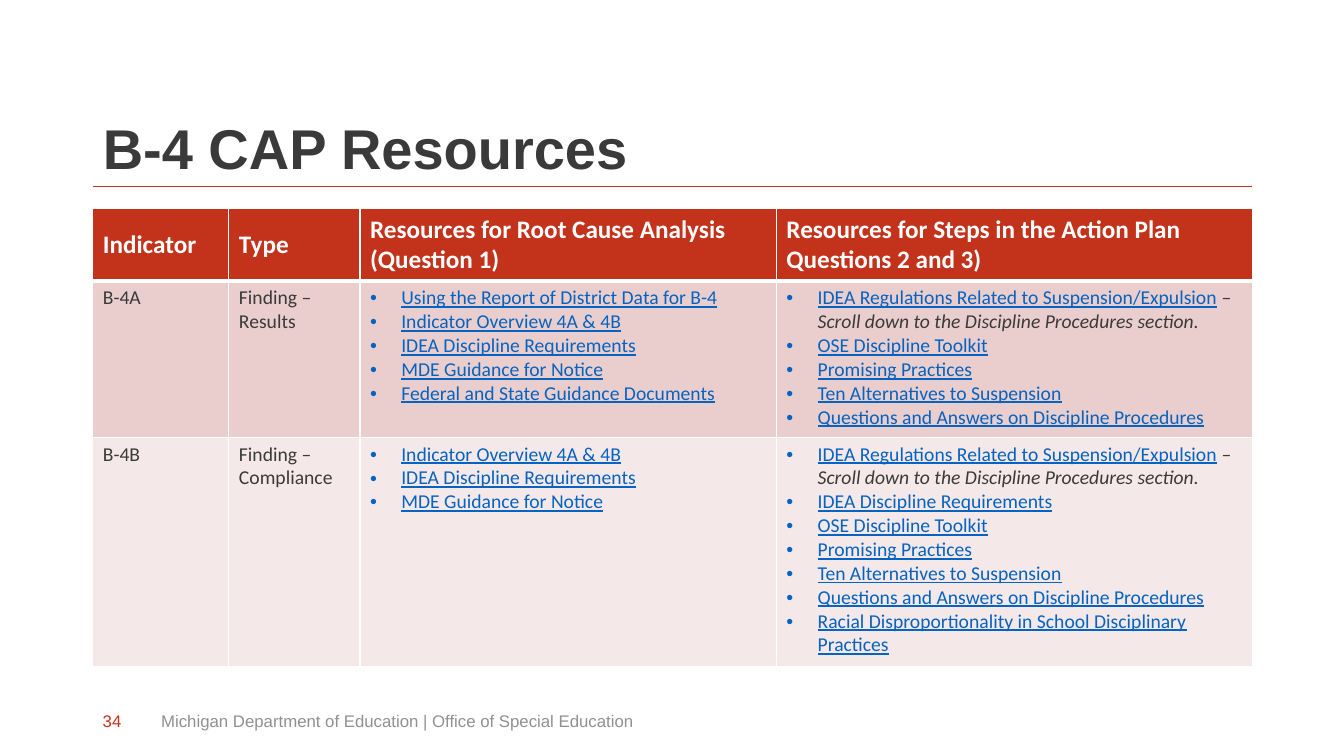
from dataclasses import dataclass

from lxml.etree import SubElement
from pptx import Presentation
from pptx.dml.color import RGBColor
from pptx.enum.text import MSO_ANCHOR, PP_ALIGN
from pptx.oxml.ns import qn
from pptx.util import Inches, Pt


@dataclass(frozen=True)
class Theme:
    red: str = "C3321B"
    ink: str = "3A3A3A"
    link: str = "0563C1"
    grey: str = "919191"
    white: str = "FFFFFF"
    heading_font: str = "Arial"
    table_font: str = "Calibri"
    title_size: int = 40
    header_size: int = 18
    body_size: int = 14
    footer_size: int = 12


@dataclass(frozen=True)
class Resource:
    title: str
    note: str = ""


@dataclass(frozen=True)
class Indicator:
    name: str
    finding: str
    root_cause: list[Resource]
    action_plan: list[Resource]
    fill: str


@dataclass(frozen=True)
class FooterText:
    text: str
    left: float
    width: float
    color: str


THEME = Theme()
LEFT = 0.92
COLUMN_WIDTHS = [1.35, 1.3, 4.13, 4.72]
ROW_HEIGHTS = [0.72, 1.55, 2.27]
HEADERS = ["Indicator", "Type", "Resources for Root Cause Analysis (Question 1)",
           "Resources for Steps in the Action Plan Questions 2 and 3)"]

REGULATIONS = Resource("IDEA Regulations Related to Suspension/Expulsion",
                       "Scroll down to the Discipline Procedures section.")
REQUIREMENTS = Resource("IDEA Discipline Requirements")
OVERVIEW = [Resource("Indicator Overview 4A & 4B"), REQUIREMENTS,
            Resource("MDE Guidance for Notice")]
DISCIPLINE = [Resource("OSE Discipline Toolkit"), Resource("Promising Practices"),
              Resource("Ten Alternatives to Suspension"),
              Resource("Questions and Answers on Discipline Procedures")]
INDICATORS = [
    Indicator("B-4A", "Finding – Results",
              [Resource("Using the Report of District Data for B-4"), *OVERVIEW,
               Resource("Federal and State Guidance Documents")],
              [REGULATIONS, *DISCIPLINE], "E9CECD"),
    Indicator("B-4B", "Finding – Compliance", OVERVIEW,
              [REGULATIONS, REQUIREMENTS, *DISCIPLINE,
               Resource("Racial Disproportionality in School Disciplinary Practices")],
              "F5E8E8"),
]
FOOTERS = [
    FooterText("Michigan Department of Education | Office of Special Education",
               1.5, 8.39, THEME.grey),
    FooterText("34", LEFT, 0.45, THEME.red),
]


def style(font, name: str, size: int, color: str, bold: bool = False,
          italic: bool = False, underline: bool = False) -> None:
    font.name, font.size = name, Pt(size)
    font.color.rgb = RGBColor.from_string(color)
    font.bold, font.italic, font.underline = bold, italic, underline


def format_cell(cell, fill: str, top: float = 1, bottom: float = 1) -> None:
    """Set white borders of the given widths, then the fill."""
    tcPr = cell._tc.get_or_add_tcPr()
    for side, width in (("L", 1), ("R", 1), ("T", top), ("B", bottom)):
        ln = SubElement(tcPr, qn(f"a:ln{side}"), w=str(Pt(width)))
        SubElement(SubElement(ln, qn("a:solidFill")), qn("a:srgbClr"), val=THEME.white)
    cell.fill.solid()
    cell.fill.fore_color.rgb = RGBColor.from_string(fill)


def write_cell(cell, text: str, size: int, color: str, bold: bool = False) -> None:
    cell.text_frame.text = text
    style(cell.text_frame.paragraphs[0].runs[0].font, THEME.table_font, size, color, bold)


def add_bullet(p) -> None:
    pPr = p._p.get_or_add_pPr()
    pPr.set("marL", str(Inches(0.31)))
    pPr.set("indent", str(-Inches(0.31)))
    SubElement(pPr, qn("a:buFont"), typeface="Arial")
    SubElement(pPr, qn("a:buChar"), char="•")


def write_resources(cell, resources: list[Resource]) -> None:
    tf = cell.text_frame
    tf.text = "\n".join(resource.title for resource in resources)
    for p, resource in zip(tf.paragraphs, resources):
        add_bullet(p)
        style(p.runs[0].font, THEME.table_font, THEME.body_size, THEME.link, underline=True)
        if resource.note:
            for text, italic in ((" – ", False), (resource.note, True)):
                r = p.add_run()
                r.text = text
                style(r.font, THEME.table_font, THEME.body_size, THEME.ink, italic=italic)


def add_title(s) -> None:
    title = s.shapes.title
    title.left, title.top = Inches(LEFT), Inches(0.4)
    title.width, title.height = Inches(11.5), Inches(1.45)
    tf = title.text_frame
    tf.text = "B-4 CAP Resources"
    tf.vertical_anchor = MSO_ANCHOR.BOTTOM
    p = tf.paragraphs[0]
    p.alignment, p.line_spacing = PP_ALIGN.LEFT, 0.9
    style(p.runs[0].font, THEME.heading_font, THEME.title_size, THEME.ink, bold=True)

    rule = s.shapes.add_connector(1, Inches(LEFT), Inches(1.85), Inches(12.42), Inches(1.85))
    rule.line.color.rgb = RGBColor.from_string(THEME.red)
    rule.line.width = Pt(0.5)
    SubElement(rule._element.spPr, qn("a:effectLst"))


def add_resource_table(s) -> None:
    table = s.shapes.add_table(len(ROW_HEIGHTS), len(COLUMN_WIDTHS), Inches(LEFT), Inches(2.07),
                               Inches(sum(COLUMN_WIDTHS)), Inches(sum(ROW_HEIGHTS))).table
    for column, width in zip(table.columns, COLUMN_WIDTHS):
        column.width = Inches(width)
    for row, height in zip(table.rows, ROW_HEIGHTS):
        row.height = Inches(height)

    for cell, header in zip(table.rows[0].cells, HEADERS):
        format_cell(cell, THEME.red, bottom=3)
        cell.vertical_anchor = MSO_ANCHOR.MIDDLE
        write_cell(cell, header, THEME.header_size, THEME.white, bold=True)

    for i, indicator in enumerate(INDICATORS, start=1):
        cells = list(table.rows[i].cells)
        for cell in cells:
            format_cell(cell, indicator.fill, top=3 if i == 1 else 1)
        write_cell(cells[0], indicator.name, THEME.body_size, THEME.ink)
        write_cell(cells[1], indicator.finding, THEME.body_size, THEME.ink)
        write_resources(cells[2], indicator.root_cause)
        write_resources(cells[3], indicator.action_plan)


def add_footer(s, footer: FooterText) -> None:
    tf = s.shapes.add_textbox(Inches(footer.left), Inches(6.95),
                              Inches(footer.width), Inches(0.4)).text_frame
    tf.word_wrap = True
    tf.vertical_anchor = MSO_ANCHOR.MIDDLE
    tf.text = footer.text
    style(tf.paragraphs[0].runs[0].font, THEME.heading_font, THEME.footer_size, footer.color)


def main() -> None:
    prs = Presentation()
    prs.slide_width, prs.slide_height = Inches(13.33), Inches(7.5)
    s = prs.slides.add_slide(prs.slide_layouts[5])
    add_title(s)
    add_resource_table(s)
    for footer in FOOTERS:
        add_footer(s, footer)
    prs.save("out.pptx")


if __name__ == "__main__":
    main()
